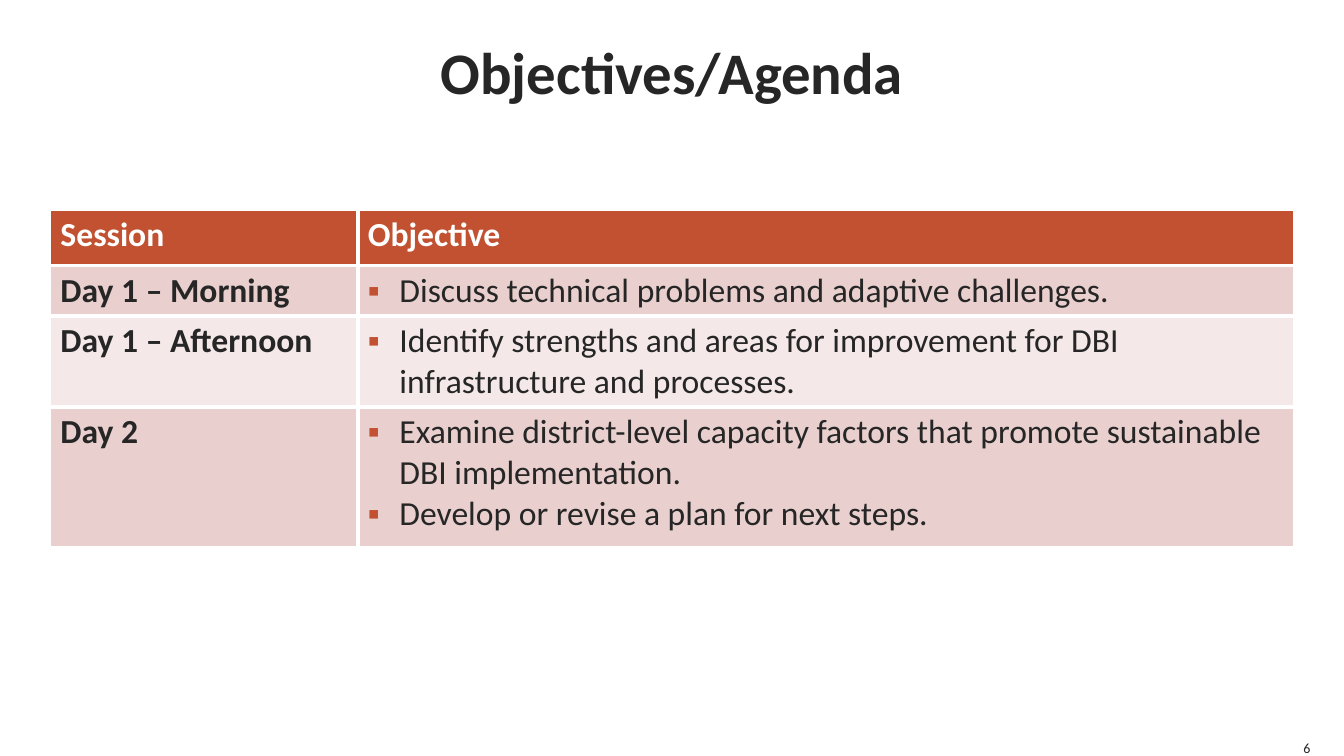
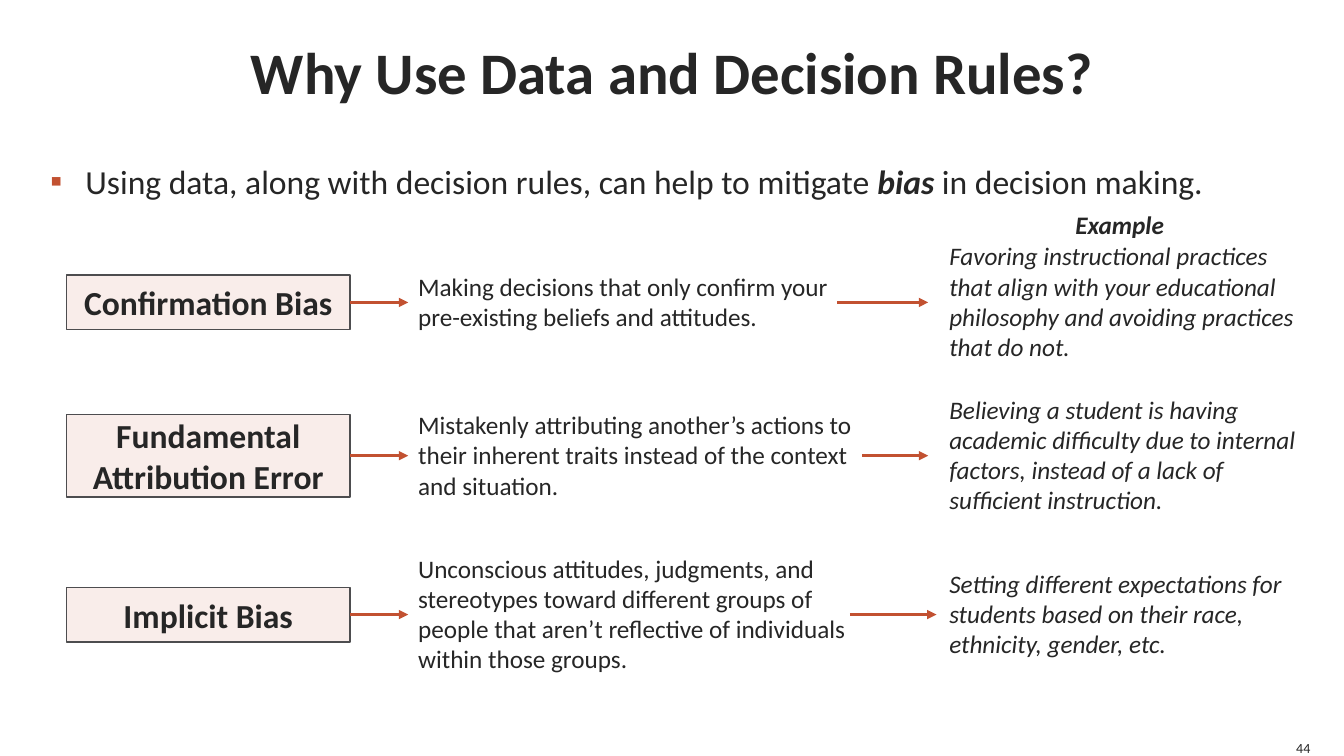
"""Build two training slides: an agenda table and a flow of bias types."""
from lxml.etree import SubElement
from pptx import Presentation
from pptx.dml.color import RGBColor
from pptx.enum.shapes import MSO_CONNECTOR as Connector, MSO_SHAPE as Shape
from pptx.enum.text import MSO_ANCHOR as Anchor, MSO_AUTO_SIZE as AutoSize, PP_ALIGN as Align
from pptx.oxml.ns import qn
from pptx.util import Pt

COLORS = {
    "text": "262626", "white": "FFFFFF", "accent": "C25131", "band": "E9D0CE",
    "light_band": "F4E9E8", "box": "F9EDEA", "outline": "4D4D4F",
}
FONT = "Calibri"
TITLE_ONLY, TITLE_AND_BODY = 5, 1
MARGIN, CONTENT_WIDTH = 36, 888
BOX_LEFT, BOX_WIDTH = 47.5, 202.5
MEANING_LEFT, EXAMPLE_LEFT = 291.6, 671

AGENDA = [
    ("Session", ["Objective"], 39.6, "accent"),
    ("Day 1 – Morning", ["Discuss technical problems and adaptive challenges."], 36, "band"),
    ("Day 1 – Afternoon",
     ["Identify strengths and areas for improvement for DBI infrastructure and processes."],
     64.8, "light_band"),
    ("Day 2",
     ["Examine district-level capacity factors that promote sustainable DBI implementation.",
      "Develop or revise a plan for next steps."], 100, "band"),
]

# Each row: middle, (name, height), (text, width, lines) twice, ends of the second arrow.
BIASES = [
    (216, ("Confirmation Bias", 39),
     ("Making decisions that only confirm your pre-existing beliefs and attitudes.", 324, 2),
     ("Favoring instructional practices that align with your educational philosophy "
      "and avoiding practices that do not.", 273.6, 4), (598, 663)),
    (325.5, ("Fundamental Attribution Error", 59),
     ("Mistakenly attributing another’s actions to their inherent traits instead of "
      "the context and situation.", 331, 3),
     ("Believing a student is having academic difficulty due to internal factors, "
      "instead of a lack of sufficient instruction.", 264, 4), (616, 663)),
    (439, ("Implicit Bias", 39),
     ("Unconscious attitudes, judgments, and stereotypes toward different groups of "
      "people that aren’t reflective of individuals within those groups.", 335, 4),
     ("Setting different expectations for students based on their race, ethnicity, "
      "gender, etc.", 273.6, 3), (607, 669)),
]


def color(name):
    """Return the named colour."""
    return RGBColor.from_string(COLORS[name])


def add_span(para, text, size, bold=False, italic=False, shade="text"):
    """Add one formatted run to a paragraph."""
    span = para.add_run()
    span.text = text
    font = span.font
    font.name, font.size, font.bold, font.italic = FONT, Pt(size), bold, italic
    font.color.rgb = color(shade)


def add_bullet(para, indent):
    """Give a paragraph a square accent bullet with a hanging indent."""
    props = para._p.get_or_add_pPr()
    props.set("marL", str(Pt(indent)))
    props.set("indent", str(-Pt(indent)))
    bullet_color = SubElement(props, qn("a:buClr"))
    SubElement(bullet_color, qn("a:srgbClr"), val=COLORS["accent"])
    SubElement(props, qn("a:buFont"), typeface=FONT)
    SubElement(props, qn("a:buChar"), char="▪")


def place(shape, left, top, width, height):
    """Move and size a shape, in points."""
    shape.left, shape.top, shape.width, shape.height = map(Pt, (left, top, width, height))


def clear_insets(frame):
    """Remove the inner margins of a text frame."""
    frame.margin_left = frame.margin_top = frame.margin_right = frame.margin_bottom = 0


def add_text(page, text, left, top, width, height, size=18, bold=False, italic=False):
    """Add a wrapping text box that grows with its text."""
    box = page.shapes.add_textbox(*map(Pt, (left, top, width, height)))
    frame = box.text_frame
    frame.word_wrap, frame.auto_size = True, AutoSize.SHAPE_TO_FIT_TEXT
    add_span(frame.paragraphs[0], text, size, bold, italic)
    return box


def add_page(deck, layout, title, number):
    """Add a slide with its title and page number."""
    page = deck.slides.add_slide(deck.slide_layouts[layout])
    heading = page.shapes.title
    place(heading, MARGIN, 0, CONTENT_WIDTH, 100.8)
    frame = heading.text_frame
    clear_insets(frame)
    frame.auto_size, frame.vertical_anchor = AutoSize.NONE, Anchor.MIDDLE
    frame.paragraphs[0].alignment = Align.CENTER
    add_span(frame.paragraphs[0], title, 42, bold=True)

    footer = add_text(page, number, 923.8, 527.8, 12.2, 12.2, size=10).text_frame
    clear_insets(footer)
    footer.word_wrap, footer.vertical_anchor = False, Anchor.BOTTOM
    footer.paragraphs[0].alignment = Align.RIGHT
    return page


def set_borders(cell, outer_sides):
    """Draw white borders, thin on the outer sides of the table."""
    props = cell._tc.get_or_add_tcPr()
    for side in "LRTB":
        width = Pt(1 if side in outer_sides else 3)
        line = SubElement(props, qn(f"a:ln{side}"), w=str(width))
        fill = SubElement(line, qn("a:solidFill"))
        SubElement(fill, qn("a:srgbClr"), val=COLORS["white"])


def fill_cell(cell, lines, shade, outer_sides, bold, bulleted):
    """Write the lines of a table cell and colour it."""
    set_borders(cell, outer_sides)
    cell.fill.solid()
    cell.fill.fore_color.rgb = color(shade)
    frame = cell.text_frame
    for index, line in enumerate(lines):
        para = frame.add_paragraph() if index else frame.paragraphs[0]
        if bulleted:
            add_bullet(para, 22.5)
        add_span(para, line, 24, bold, shade="white" if shade == "accent" else "text")


def add_agenda(page):
    """Add the table of sessions and objectives."""
    total = sum(height for _, _, height, _ in AGENDA)
    frame = page.shapes.add_table(
        len(AGENDA), 2, Pt(MARGIN), Pt(150), Pt(CONTENT_WIDTH), Pt(total))
    table = frame.table
    table.columns[0].width, table.columns[1].width = Pt(219.6), Pt(CONTENT_WIDTH - 219.6)
    for row, (session, objectives, height, shade) in enumerate(AGENDA):
        table.rows[row].height = Pt(height)
        header = row == 0
        edge = "T" if header else "B" if row == len(AGENDA) - 1 else ""
        fill_cell(table.cell(row, 0), [session], shade, edge + "L", True, False)
        fill_cell(table.cell(row, 1), objectives, shade, edge + "R", header, not header)


def add_body(page, spans):
    """Fill the body placeholder with one bulleted paragraph."""
    body = page.placeholders[1]
    place(body, MARGIN, 108, CONTENT_WIDTH, 342)
    frame = body.text_frame
    clear_insets(frame)
    frame.auto_size = AutoSize.NONE
    para = frame.paragraphs[0]
    add_bullet(para, 25)
    para.line_spacing, para.space_before = 1.25, Pt(0)
    for text, strong in spans:
        add_span(para, text, 24, bold=strong, italic=strong)


def add_name_box(page, name, middle, height):
    """Add an outlined box naming a bias."""
    box = page.shapes.add_shape(
        Shape.RECTANGLE, *map(Pt, (BOX_LEFT, middle - height / 2, BOX_WIDTH, height)))
    box.shadow.inherit = False
    box.fill.solid()
    box.fill.fore_color.rgb = color("box")
    box.line.color.rgb, box.line.width = color("outline"), Pt(1)
    frame = box.text_frame
    frame.word_wrap, frame.vertical_anchor = True, Anchor.MIDDLE
    frame.paragraphs[0].alignment = Align.CENTER
    add_span(frame.paragraphs[0], name, 24, bold=True)
    return box


def add_centered_text(page, left, middle, text, width, lines, italic=False):
    """Add a text box centred on the middle of its row."""
    height = 7.2 + 22 * lines
    return add_text(page, text, left, middle - height / 2, width, height, italic=italic)


def add_arrow(page, start, end, middle):
    """Add a horizontal accent arrow."""
    arrow = page.shapes.add_connector(
        Connector.STRAIGHT, Pt(start), Pt(middle), Pt(end), Pt(middle))
    arrow.line.color.rgb, arrow.line.width = color("accent"), Pt(2.25)
    SubElement(arrow.line._get_or_add_ln(), qn("a:tailEnd"), type="triangle")
    SubElement(arrow._element.spPr, qn("a:effectLst"))
    return arrow


def add_bias_row(page, middle, name, meaning, example, arrow_ends):
    """Add a bias with its meaning and example, linked by arrows."""
    name_box = add_name_box(page, name[0], middle, name[1])
    meaning_box = add_centered_text(page, MEANING_LEFT, middle, *meaning)
    add_centered_text(page, EXAMPLE_LEFT, middle, *example, italic=True)
    link = add_arrow(page, BOX_LEFT + BOX_WIDTH, MEANING_LEFT, middle)
    link.begin_connect(name_box, 3)
    link.end_connect(meaning_box, 1)
    add_arrow(page, *arrow_ends, middle)


def main():
    """Build and save the deck."""
    deck = Presentation()
    deck.slide_width, deck.slide_height = Pt(960), Pt(540)

    add_agenda(add_page(deck, TITLE_ONLY, "Objectives/Agenda", "6"))

    page = add_page(deck, TITLE_AND_BODY, "Why Use Data and Decision Rules?", "44")
    add_body(page, [
        ("Using data, along with decision rules, can help to mitigate ", False),
        ("bias", True),
        (" in decision making.", False),
    ])
    add_text(page, "Example", 761, 146.2, 93, 29, bold=True, italic=True)
    for bias in BIASES:
        add_bias_row(page, *bias)

    deck.save("out.pptx")


if __name__ == "__main__":
    main()
